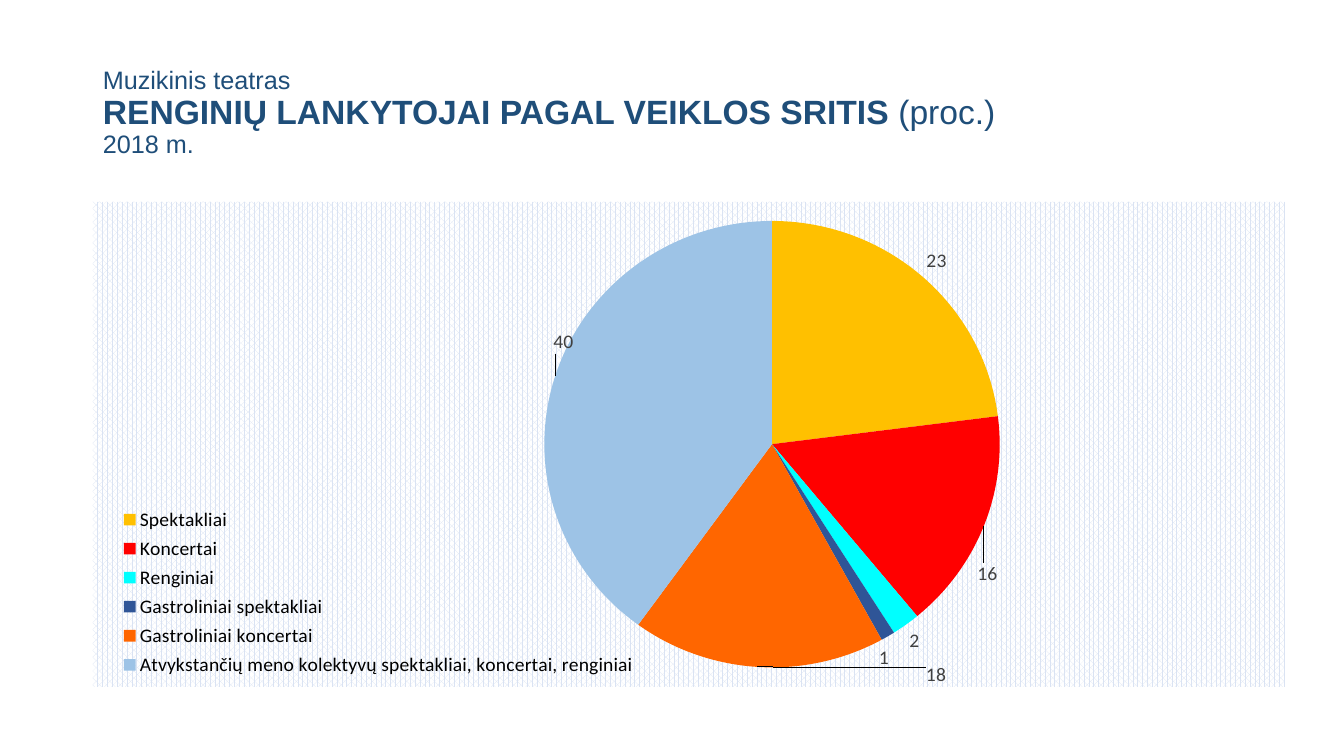
from lxml.etree import SubElement
from pptx import Presentation
from pptx.chart.data import CategoryChartData
from pptx.dml.color import RGBColor
from pptx.enum.chart import XL_CHART_TYPE as CT, XL_LABEL_POSITION as LP, XL_LEGEND_POSITION as LEG
from pptx.enum.text import MSO_ANCHOR, MSO_AUTO_SIZE, PP_ALIGN
from pptx.oxml import parse_xml
from pptx.oxml.ns import nsdecls, qn
from pptx.util import Inches, Pt

COLORS = {"title": "1F4E79", "text": "000000", "label": "404040",
          "pattern": "DAE3F3", "paper": "FFFFFF"}

# Category, value, slice colour, label shift as a share of the chart
SLICES = [
    ("Spektakliai", 23, "FFC000", None),
    ("Koncertai", 16, "FF0000", (-0.01, 0.07)),
    ("Renginiai", 2, "00FFFF", None),
    ("Gastroliniai spektakliai", 1, "2F5597", (-0.01, 0.01)),
    ("Gastroliniai koncertai", 18, "FF6600", (0.15, -0.01)),
    ("Atvykstančių meno kolektyvų spektakliai, koncertai, renginiai", 40, "9DC3E6", (0.02, -0.04)),
]


def set_font(font, color, **values):
    for name, value in values.items():
        setattr(font, name, value)
    font.color.rgb = RGBColor.from_string(COLORS[color])


def make_layout(layout, **values):
    manual = SubElement(layout, qn("c:manualLayout"))
    for name, value in values.items():
        SubElement(manual, qn(f"c:{name}")).set("val", str(value))


prs = Presentation()
prs.slide_width, prs.slide_height = Inches(13.33), Inches(7.5)
s = prs.slides.add_slide(prs.slide_layouts[5])

# Title
title = s.shapes.title
title.left, title.top, title.width, title.height = map(Inches, (0.92, 0.4, 11.5, 1.45))
tf = title.text_frame
for name, value in {"word_wrap": True, "auto_size": MSO_AUTO_SIZE.NONE,
                    "vertical_anchor": MSO_ANCHOR.MIDDLE}.items():
    setattr(tf, name, value)
p = tf.paragraphs[0]
p.alignment, p.line_spacing = PP_ALIGN.LEFT, 0.9
for text, size, bold, breaks in [
    ("Muzikinis teatras", 18, False, True),
    ("RENGINIŲ LANKYTOJAI PAGAL VEIKLOS SRITIS ", 24, True, False),
    ("(proc.)", 24, False, True),
    ("2018 m.", 18, False, False),
]:
    r = p.add_run()
    r.text = text
    set_font(r.font, "title", name="Arial", size=Pt(size), bold=bold)
    if breaks:
        p.add_line_break()

# Pie chart
data = CategoryChartData(number_format="0")
data.categories = [row[0] for row in SLICES]
data.add_series("Series 1", [row[1] for row in SLICES])
chart = s.shapes.add_chart(CT.PIE, Inches(0.92), Inches(2), Inches(11.82), Inches(4.91), data).chart
chart.has_title = False
set_font(chart.font, "text", name="Calibri", size=Pt(10))

# Slices and their labels
plot = chart.plots[0]
plot.vary_by_categories = True
for i, (_, _, color, shift) in enumerate(SLICES):
    point = plot.series[0].points[i]
    point.format.fill.solid()
    point.format.fill.fore_color.rgb = RGBColor.from_string(color)
    point.format.line.fill.background()
    label = point.data_label
    set_font(label.font, "label", name="Calibri", size=Pt(14))
    label.position = LP.OUTSIDE_END
    if shift:
        dlbl = chart.element.xpath(f".//c:dLbl[c:idx/@val='{i}']")[0]
        layout = parse_xml(f"<c:layout {nsdecls('c')}/>")
        dlbl.find(qn("c:idx")).addnext(layout)
        make_layout(layout, x=shift[0], y=shift[1])

# Legend
chart.has_legend = True
legend = chart.legend
legend.position, legend.include_in_layout = LEG.BOTTOM, False
set_font(legend.font, "text", name="Calibri", size=Pt(14))
layout = legend.font and chart.element.find(".//" + qn("c:legend")).find(qn("c:layout"))
if layout is None:
    layout = parse_xml(f"<c:layout {nsdecls('c')}/>")
    chart.element.find(".//" + qn("c:legendPos")).addnext(layout)
make_layout(layout, xMode="edge", yMode="edge", x=0.01, y=0.62, w=0.46, h=0.37)

# Plot area position
plot_area = chart.element.find(".//" + qn("c:plotArea"))
layout = plot_area.find(qn("c:layout"))
if layout is None:
    layout = parse_xml(f"<c:layout {nsdecls('c')}/>")
    plot_area.insert(0, layout)
make_layout(layout, layoutTarget="inner", xMode="edge", yMode="edge",
            x=0.14, y=0.04, w=0.86, h=0.92)

# Patterned chart background
chart.element.find(qn("c:chart")).addnext(parse_xml(
    f'<c:spPr {nsdecls("c", "a")}><a:pattFill prst="pct70">'
    f'<a:fgClr><a:srgbClr val="{COLORS["pattern"]}"/></a:fgClr>'
    f'<a:bgClr><a:srgbClr val="{COLORS["paper"]}"/></a:bgClr>'
    '</a:pattFill><a:ln><a:noFill/></a:ln></c:spPr>'))

prs.save("out.pptx")
